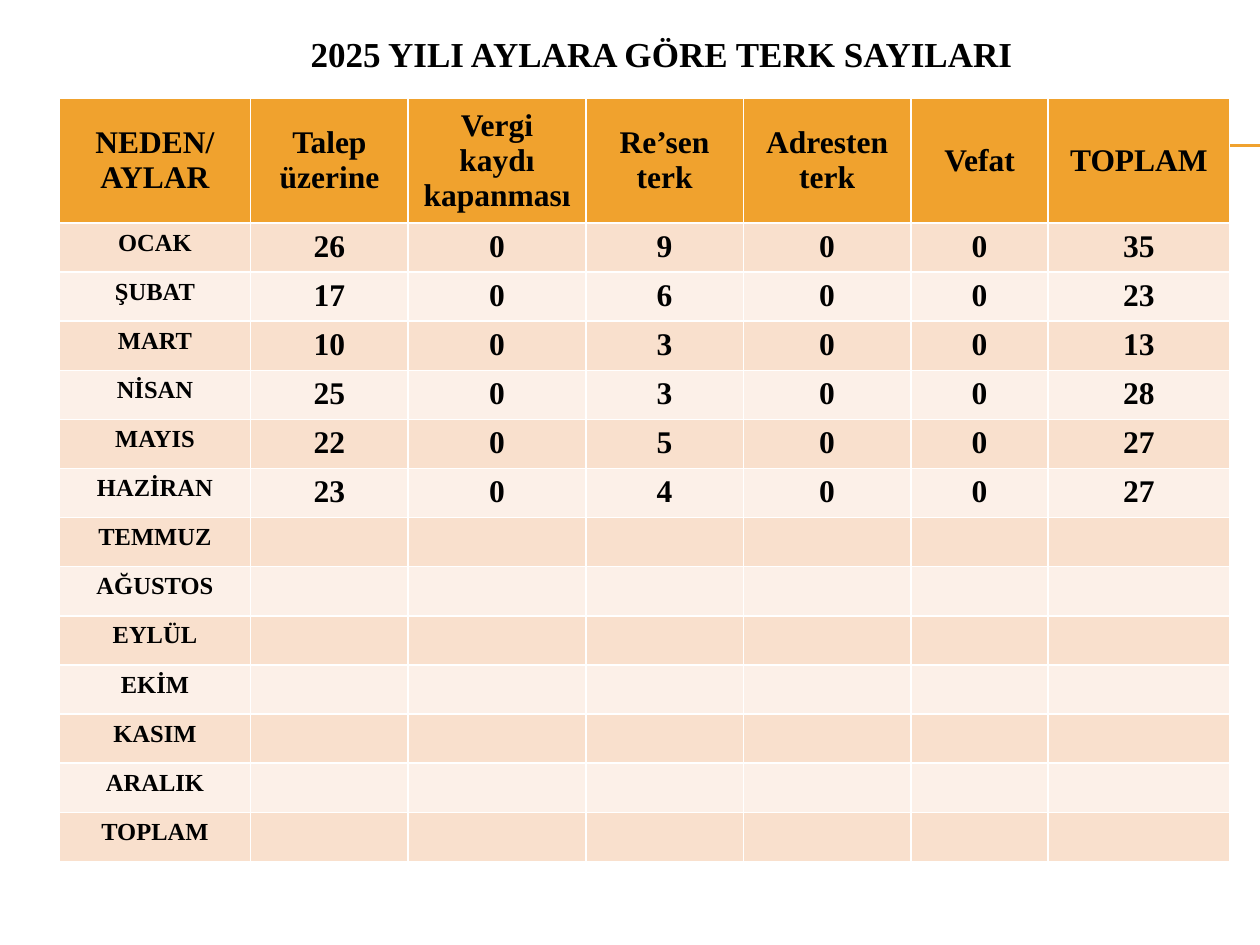
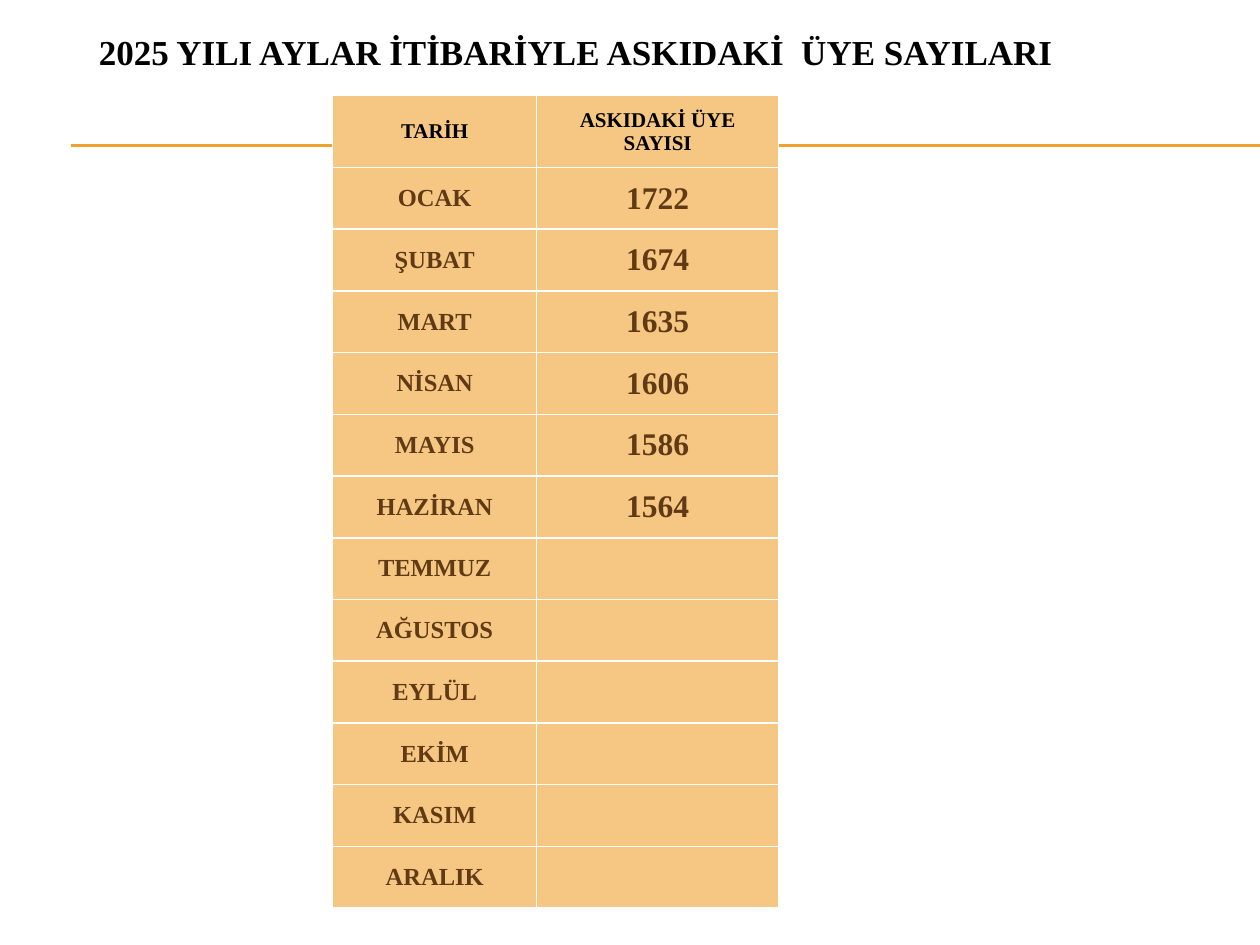
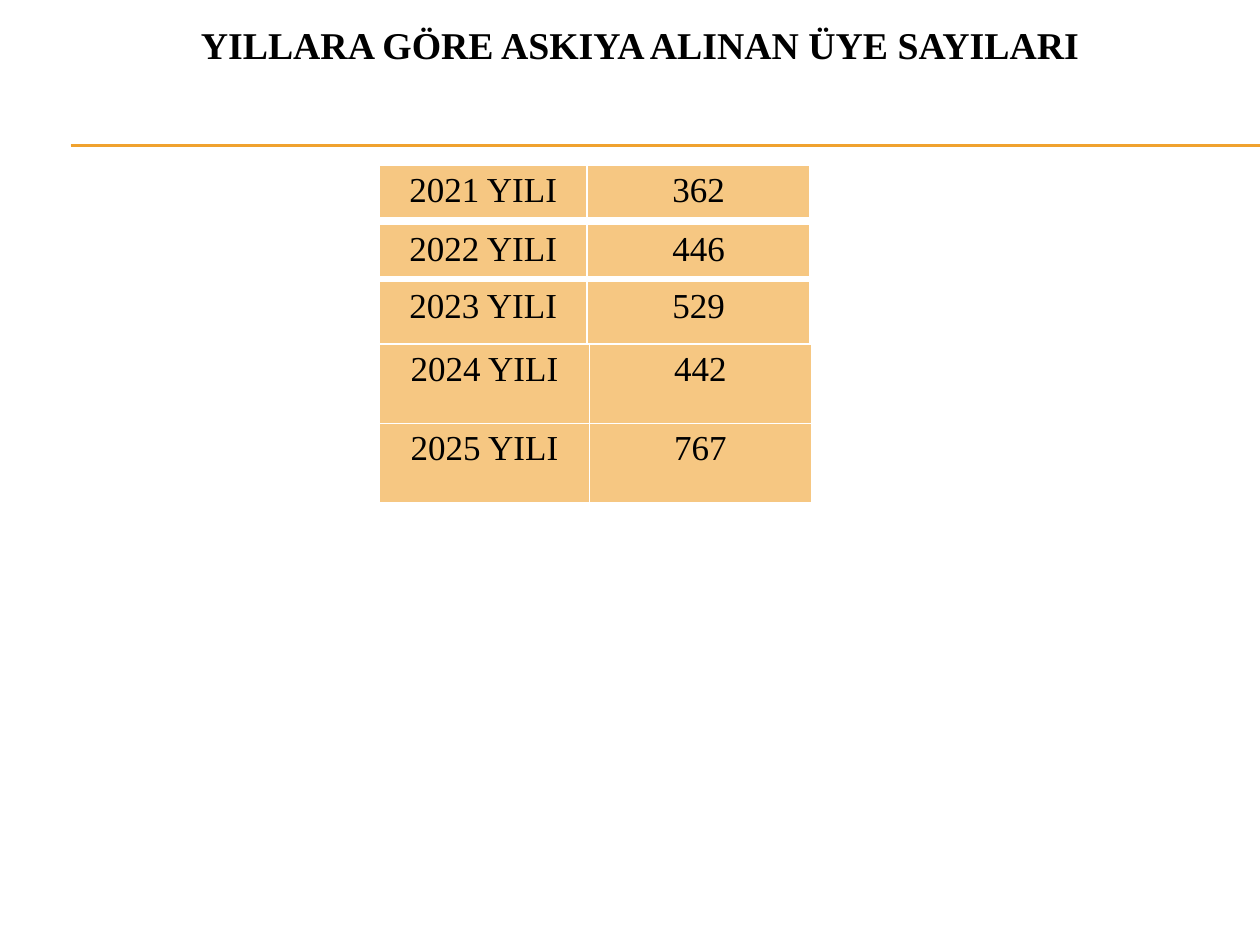
"""Builds three slides of monthly and yearly membership tables."""
from lxml.etree import SubElement
from pptx import Presentation
from pptx.dml.color import RGBColor
from pptx.enum.shapes import MSO_CONNECTOR
from pptx.enum.text import MSO_ANCHOR, MSO_AUTO_SIZE, PP_ALIGN
from pptx.oxml.ns import qn
from pptx.util import Inches, Pt

FONT = "Times New Roman"
BLACK, BROWN = "000000", "603A14"
ORANGE, LIGHT_ORANGE = "F0A22E", "F6C782"
BANDS = ["F9E0CD", "FCF0E8"]
MONTHS = ["OCAK", "ŞUBAT", "MART", "NİSAN", "MAYIS", "HAZİRAN",
          "TEMMUZ", "AĞUSTOS", "EYLÜL", "EKİM", "KASIM", "ARALIK"]


def write(tf, text, size=18, color=BLACK, bold=True):
    p = tf.paragraphs[0]
    p.alignment = PP_ALIGN.CENTER
    r = p.add_run()
    r.text = text
    r.font.name = FONT
    r.font.size = Pt(size)
    r.font.bold = bold
    r.font.color.rgb = RGBColor.from_string(color)


def add_grid(s, left, top, widths, heights, rows, style):
    """Add a table; style(row, column) gives fill, anchor and text format."""
    table = s.shapes.add_table(
        len(heights), len(widths), Inches(left), Inches(top),
        Inches(sum(widths)), Inches(sum(heights))).table
    for column, width in zip(table.columns, widths):
        column.width = Inches(width)
    for i, height in enumerate(heights):
        table.rows[i].height = Inches(height)
        for j in range(len(widths)):
            cell = table.cell(i, j)
            fill, anchor, text_format = style(i, j)
            cell.fill.solid()
            cell.fill.fore_color.rgb = RGBColor.from_string(fill)
            cell.vertical_anchor = anchor
            if j < len(rows[i]):
                write(cell.text_frame, rows[i][j], **text_format)
            else:
                cell.margin_top = cell.margin_bottom = 0


prs = Presentation()
prs.slide_width, prs.slide_height = Inches(10), Inches(7.5)

titles = [
    ("2025 YILI AYLARA GÖRE TERK SAYILARI",
     (0.5, 0.21, 9.5, 0.57), 20, MSO_ANCHOR.TOP),
    ("2025 YILI AYLAR İTİBARİYLE ASKIDAKİ  ÜYE SAYILARI",
     (0.28, 0.05, 8.58, 0.71), 20, MSO_ANCHOR.MIDDLE),
    ("YILLARA GÖRE ASKIYA ALINAN ÜYE SAYILARI",
     (0.33, 0.13, 9.5, 0.45), 21.6, MSO_ANCHOR.MIDDLE),
]
slides = []
for text, box, size, anchor in titles:
    s = prs.slides.add_slide(prs.slide_layouts[5])
    slides.append(s)
    sp = s.shapes.title
    sp.left, sp.top, sp.width, sp.height = [Inches(v) for v in box]
    tf = sp.text_frame
    tf.auto_size = MSO_AUTO_SIZE.NONE
    tf.word_wrap = True
    tf.vertical_anchor = anchor
    write(tf, text, size=size)
    for y in (1.15, 1.16):
        rule = s.shapes.add_connector(
            MSO_CONNECTOR.STRAIGHT, Inches(0.56), Inches(y), Inches(10), Inches(y))
        rule.line.color.rgb = RGBColor.from_string(ORANGE)
        rule.line.width = Pt(0.75)
        SubElement(rule._element.spPr, qn("a:effectLst"))

departures_slide, suspended_slide, yearly_slide = slides

departures = [
    ["26", "0", "9", "0", "0", "35"],
    ["17", "0", "6", "0", "0", "23"],
    ["10", "0", "3", "0", "0", "13"],
    ["25", "0", "3", "0", "0", "28"],
    ["22", "0", "5", "0", "0", "27"],
    ["23", "0", "4", "0", "0", "27"],
]
rows = [["NEDEN/ AYLAR", "Talep üzerine", "Vergi kaydı kapanması", "Re’sen terk",
         "Adresten terk", "Vefat", "TOPLAM"]]
rows += [[month] + values for month, values in zip(MONTHS, departures)]
rows += [[label] for label in MONTHS[len(departures):] + ["TOPLAM"]]
add_grid(departures_slide, 0.47, 0.78, [1.52, 1.25, 1.41, 1.25, 1.33, 1.09, 1.44],
         [0.99] + [0.39] * 13, rows,
         lambda i, j: (BANDS[(i - 1) % 2], MSO_ANCHOR.TOP, {"size": 18 if j else 14})
         if i else (ORANGE, MSO_ANCHOR.MIDDLE, {}))

suspended = ["1722", "1674", "1635", "1606", "1586", "1564"]
rows = [["TARİH", "ASKIDAKİ ÜYE SAYISI"]]
rows += [[month, value] for month, value in zip(MONTHS, suspended)]
rows += [[month] for month in MONTHS[len(suspended):]]
add_grid(suspended_slide, 2.64, 0.76, [1.62, 1.92], [0.57] + [0.49] * 12, rows,
         lambda i, j: (LIGHT_ORANGE, MSO_ANCHOR.MIDDLE,
                       {"size": 18 if j else 14, "color": BROWN} if i else {"size": 12}))

yearly_tables = [
    (1.31, [1.65, 1.77], [0.42], [["2021 YILI", "362"]]),
    (1.78, [1.65, 1.77], [0.42], [["2022 YILI", "446"]]),
    (2.23, [1.65, 1.77], [0.5], [["2023 YILI", "529"]]),
    (2.73, [1.67, 1.76], [0.63, 0.63], [["2024 YILI", "442"], ["2025 YILI", "767"]]),
]
for top, widths, heights, rows in yearly_tables:
    add_grid(yearly_slide, 3.01, top, widths, heights, rows,
             lambda i, j: (LIGHT_ORANGE, MSO_ANCHOR.TOP, {"size": 20, "bold": False}))

prs.save("out.pptx")
